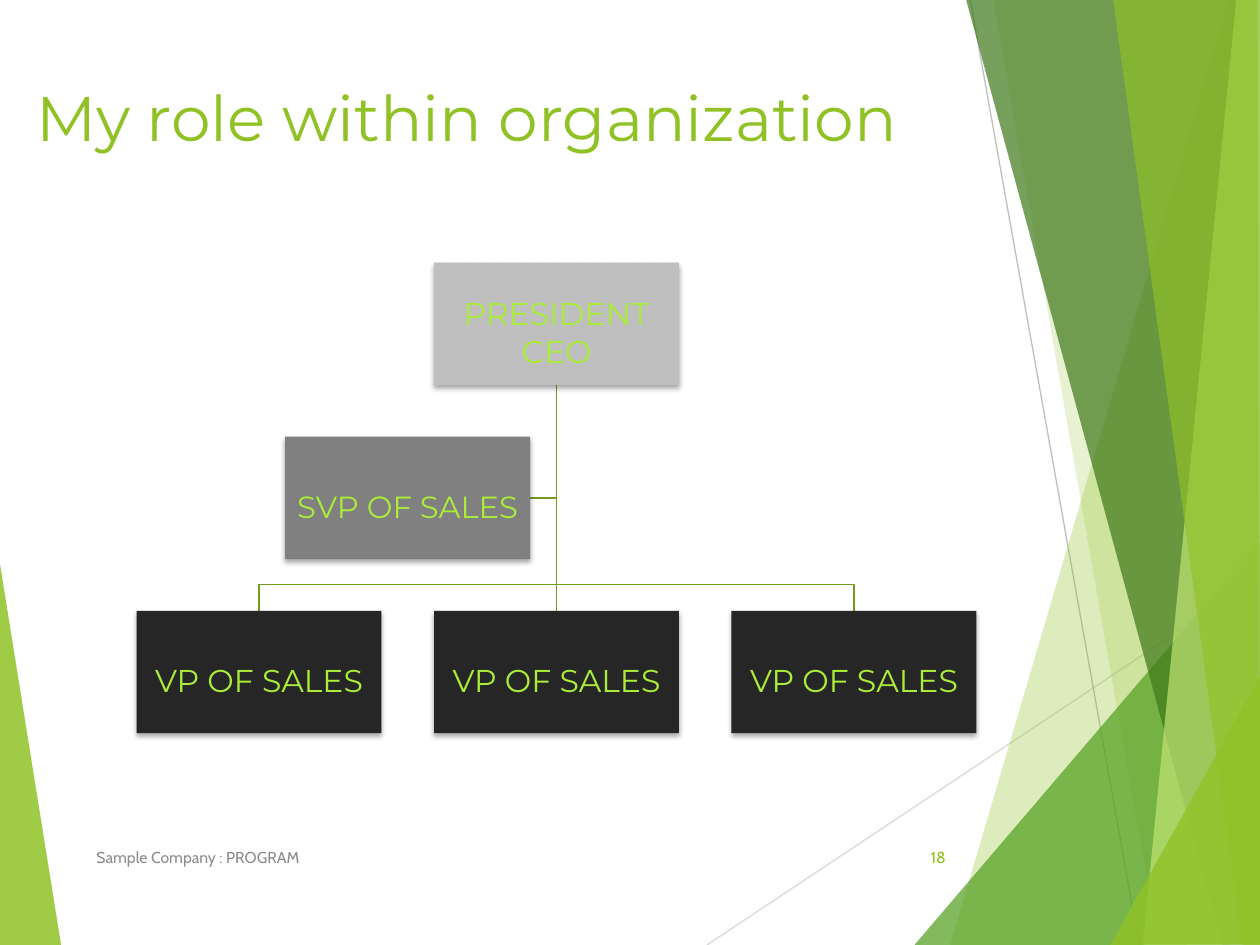
from dataclasses import dataclass
from typing import Any

from lxml.etree import SubElement
from pptx import Presentation
from pptx.dml.color import RGBColor
from pptx.enum.shapes import MSO_CONNECTOR as Link, MSO_SHAPE as Preset
from pptx.enum.text import MSO_ANCHOR as Anchor, MSO_AUTO_SIZE as AutoSize, PP_ALIGN as Align
from pptx.oxml.ns import qn
from pptx.util import Pt

Point = tuple[float, float]


@dataclass(frozen=True)
class Theme:
    green: str = "90C226"
    leaf: str = "54A021"
    forest: str = "3F7819"
    lime: str = "C0E474"
    role_text: str = "AAEC39"
    branch: str = "739B1E"
    president: str = "BFBFBF"
    senior: str = "808080"
    vice: str = "262626"
    footer: str = "8C8C8C"
    pale_rule: str = "D9D9D9"
    heading_font: str = "Montserrat"
    footer_font: str = "Cabin"
    title_size: float = 36
    role_size: float = 18
    senior_size: float = 17.5
    footer_size: float = 9


@dataclass(frozen=True)
class Wedge:
    corners: tuple[Point, ...]
    color: str
    opacity: int


@dataclass(frozen=True)
class Role:
    lines: tuple[str, ...]
    left: float
    top: float
    color: str
    size: float


@dataclass(frozen=True)
class Caption:
    text: str
    left: float
    width: float
    color: str
    align: Align


THEME = Theme()
SLIDE_W, SLIDE_H = 720, 540
BOX_W, BOX_H = 140, 70
CHART_LEFT, CHART_TOP = 78, 150
COLUMN_STEP, ROW_STEP = 170, 99.5
BRANCH_DROP = 15

WEDGES = (
    Wedge(((-1, 316), (35, 540.5), (-1, 540)), THEME.green, 85),
    Wedge(((702, 0), (543, 540), (721, 540.5), (721, 0.5)), THEME.green, 30),
    Wedge(((567.5, -0.5), (662, 540), (721, 540), (721, -0.5)), THEME.green, 20),
    Wedge(((522.5, 540), (720, 309), (721, 540)), THEME.leaf, 72),
    Wedge(((552, -0.5), (698.5, 540), (721, 539.5), (721, -0.5)), THEME.forest, 70),
    Wedge(((706.5, -0.5), (653, 540), (721, 540), (720, -0.5)), THEME.lime, 70),
    Wedge(((636, -0.5), (710, 540), (720, 540), (718.5, -0.5)), THEME.green, 65),
    Wedge(((634.5, 540), (721, 385), (721, 539.5)), THEME.green, 80),
)
RULES = (
    ((404, 540), (721, 329), THEME.pale_rule),
    ((554.5, 0), (651, 540), THEME.president),
)
PRESIDENT = Role(("PRESIDENT", "CEO"), CHART_LEFT + COLUMN_STEP, CHART_TOP,
                 THEME.president, THEME.role_size)
SENIOR = Role(("SVP OF SALES",), CHART_LEFT + COLUMN_STEP / 2, CHART_TOP + ROW_STEP,
              THEME.senior, THEME.senior_size)
VICES = tuple(
    Role(("VP OF SALES",), CHART_LEFT + column * COLUMN_STEP, CHART_TOP + 2 * ROW_STEP,
         THEME.vice, THEME.role_size)
    for column in range(3)
)
CAPTIONS = (
    Caption("Sample Company : PROGRAM", 48, 364, THEME.footer, Align.LEFT),
    Caption("18", 507.5, 40, THEME.green, Align.RIGHT),
)


def apply_format(target: Any, values: dict[str, Any]) -> None:
    for attribute, value in values.items():
        setattr(target, attribute, value)


def paint(fill: Any, color: str) -> None:
    fill.solid()
    fill.fore_color.rgb = RGBColor.from_string(color)


def stroke(line: Any, color: str, width: float) -> None:
    paint(line.fill, color)
    line.width = Pt(width)


def write(frame: Any, lines: tuple[str, ...], font: str, size: float,
          color: str, align: Align) -> None:
    for index, words in enumerate(lines):
        paragraph = frame.paragraphs[0] if index == 0 else frame.add_paragraph()
        paragraph.alignment = align
        run = paragraph.add_run()
        run.text = words
        apply_format(run.font, {"name": font, "size": Pt(size)})
        run.font.color.rgb = RGBColor.from_string(color)


def draw_outline(shapes: Any, points: tuple[Point, ...], close: bool) -> Any:
    start, *rest = [(Pt(x), Pt(y)) for x, y in points]
    builder = shapes.build_freeform(*start, scale=1.0)
    builder.add_line_segments(rest, close=close)
    outline = builder.convert_to_shape()
    outline.shadow.inherit = False
    return outline


def draw_wedge(shapes: Any, wedge: Wedge) -> None:
    facet = draw_outline(shapes, wedge.corners, True)
    paint(facet.fill, wedge.color)
    facet.line.fill.background()
    tint = facet._element.spPr.find(qn("a:solidFill"))[0]
    SubElement(tint, qn("a:alpha"), val=str(wedge.opacity * 1000))


def draw_branch(shapes: Any, points: tuple[Point, ...]) -> None:
    branch = draw_outline(shapes, points, False)
    branch.fill.background()
    stroke(branch.line, THEME.branch, 1)


def draw_line(shapes: Any, start: Point, end: Point, color: str, width: float) -> Any:
    line = shapes.add_connector(Link.STRAIGHT, *(Pt(value) for value in (*start, *end)))
    stroke(line.line, color, width)
    SubElement(line._element.spPr, qn("a:effectLst"))
    return line


def draw_role(shapes: Any, role: Role) -> Any:
    box = shapes.add_shape(Preset.RECTANGLE, Pt(role.left), Pt(role.top), Pt(BOX_W), Pt(BOX_H))
    paint(box.fill, role.color)
    box.line.fill.background()
    box.shadow.inherit = False
    effects = box._element.spPr.find(qn("a:effectLst"))
    shade = SubElement(effects, qn("a:outerShdw"), blurRad=str(Pt(3)), dist=str(Pt(2)),
                       dir="5400000", rotWithShape="0")
    black = SubElement(shade, qn("a:srgbClr"), val="000000")
    SubElement(black, qn("a:alpha"), val="35000")
    apply_format(box.text_frame, {
        "word_wrap": True, "vertical_anchor": Anchor.MIDDLE,
        "margin_left": Pt(3), "margin_right": Pt(3),
        "margin_top": Pt(9), "margin_bottom": Pt(0),
    })
    write(box.text_frame, role.lines, THEME.heading_font, role.size, THEME.role_text, Align.CENTER)
    return box


def draw_caption(shapes: Any, caption: Caption) -> None:
    label = shapes.add_textbox(Pt(caption.left), Pt(475.5), Pt(caption.width), Pt(29))
    apply_format(label.text_frame, {"word_wrap": True, "vertical_anchor": Anchor.MIDDLE})
    write(label.text_frame, (caption.text,), THEME.footer_font, THEME.footer_size,
          caption.color, caption.align)


def draw_organization(shapes: Any) -> None:
    trunk_x = PRESIDENT.left + BOX_W / 2
    trunk_top = (trunk_x, PRESIDENT.top + BOX_H)
    senior_y = SENIOR.top + BOX_H / 2
    vice_top = VICES[0].top
    fork_y = vice_top - BRANCH_DROP
    draw_branch(shapes, (trunk_top, (trunk_x, senior_y), (SENIOR.left + BOX_W, senior_y)))
    for vice in (VICES[0], VICES[-1]):
        center = vice.left + BOX_W / 2
        draw_branch(shapes, (trunk_top, (trunk_x, fork_y), (center, fork_y), (center, vice_top)))
    trunk = draw_line(shapes, trunk_top, (trunk_x, vice_top), THEME.branch, 1)
    president, _, _, middle_vice, _ = [
        draw_role(shapes, role) for role in (PRESIDENT, SENIOR, *VICES)
    ]
    trunk.begin_connect(president, 2)
    trunk.end_connect(middle_vice, 0)


def main() -> None:
    deck = Presentation()
    apply_format(deck, {"slide_width": Pt(SLIDE_W), "slide_height": Pt(SLIDE_H)})
    slide = deck.slides.add_slide(deck.slide_layouts[5])
    shapes = slide.shapes
    for start, end, color in RULES:
        draw_line(shapes, start, end, color, 0.75)
    for wedge in WEDGES:
        draw_wedge(shapes, wedge)
    draw_organization(shapes)
    title = shapes.title
    apply_format(title, {"left": Pt(13.5), "top": Pt(41), "width": Pt(564), "height": Pt(104)})
    apply_format(title.text_frame, {
        "word_wrap": True, "vertical_anchor": Anchor.TOP, "auto_size": AutoSize.NONE,
    })
    write(title.text_frame, ("My role within organization",), THEME.heading_font,
          THEME.title_size, THEME.green, Align.LEFT)
    for caption in CAPTIONS:
        draw_caption(shapes, caption)
    deck.save("out.pptx")


if __name__ == "__main__":
    main()
